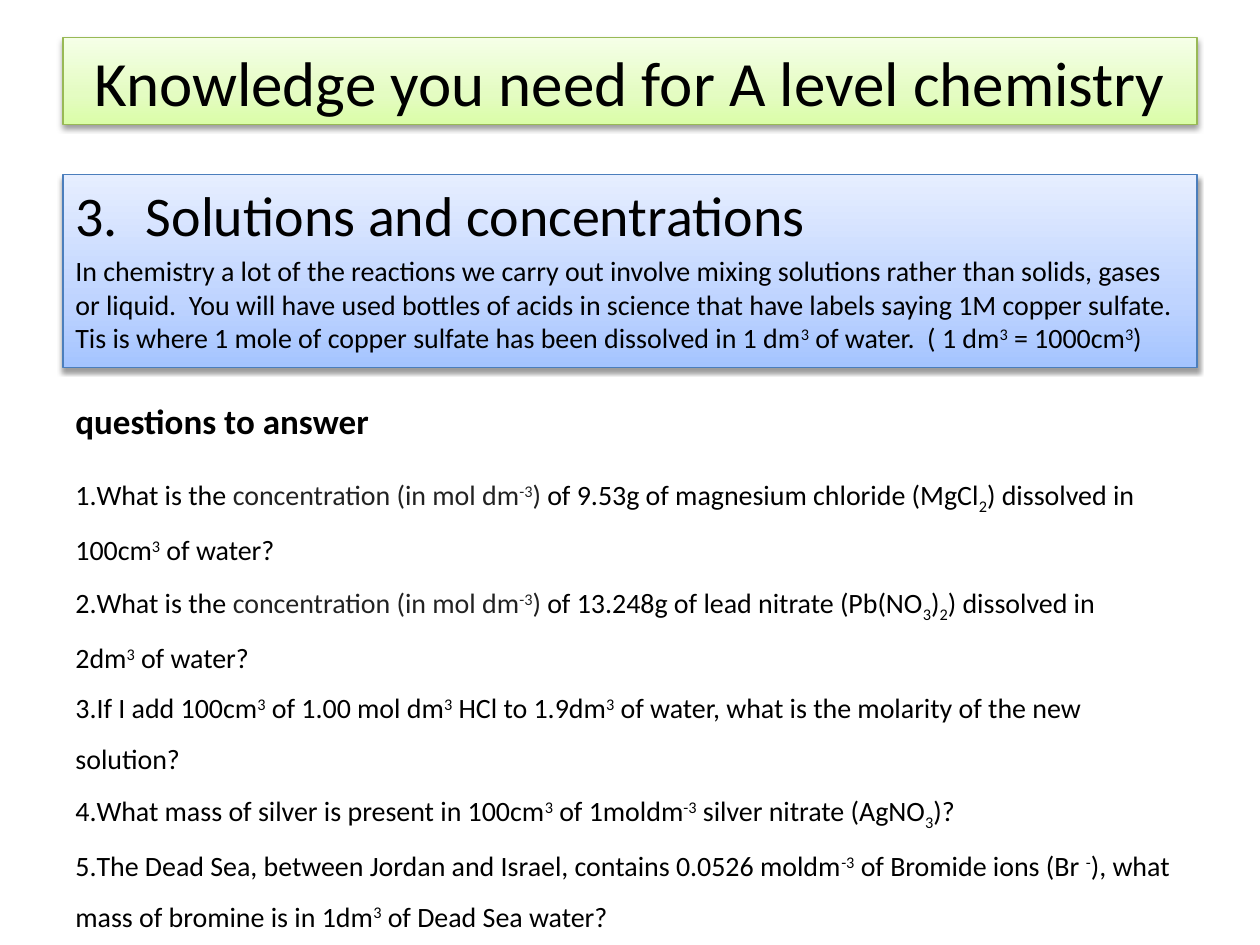
import pptx
import pptx.util
import pptx.dml.color
import pptx.enum.shapes
import pptx.enum.text
import pptx.oxml
import pptx.oxml.ns

Pt = pptx.util.Pt
COLOURS = {"text": "000000", "grey": "222222", "shadow": "000000",
           "green_line": "98B955", "blue_line": "4B7EBC"}
GREEN = [(0, "DAFDA7"), (35, "E4FCC2"), (100, "F5FFE7")]
BLUE = [(0, "A4C4FF"), (35, "BFD4FF"), (100, "E6EEFF")]
NAMESPACE = pptx.oxml.ns.nsdecls("a")

deck = pptx.Presentation()
deck.slide_width = pptx.util.Inches(10)
deck.slide_height = pptx.util.Inches(7.5)
slide = deck.slides.add_slide(deck.slide_layouts[6])
W, H = deck.slide_width, deck.slide_height
MARGIN = int(W * 0.05)


def write(paragraph, marked, size, bold=False):
    """Split marked text at "|": ^ raises, _ lowers, * greys a run; ~ is a no-break space."""
    paragraph.font.name = "Calibri"
    paragraph.font.size = Pt(size)
    paragraph.font.bold = bold
    for part in marked.split("|"):
        words = part.lstrip("*^_")
        marks = part[:len(part) - len(words)]
        run = paragraph.add_run()
        run.text = words.replace("~", chr(160))
        colour = COLOURS["grey" if "*" in marks else "text"]
        run.font.color.rgb = pptx.dml.color.RGBColor.from_string(colour)
        if "^" in marks:
            run.font._element.set("baseline", "30000")
        elif "_" in marks:
            run.font._element.set("baseline", "-25000")


def number(paragraph, start, indent=0):
    """Give the paragraph an automatic number with a hanging indent."""
    properties = paragraph._p.get_or_add_pPr()
    properties.set("marL", str(indent))
    properties.set("indent", str(-indent))
    bullet = pptx.oxml.parse_xml(
        f'<a:buAutoNum {NAMESPACE} type="arabicPeriod" startAt="{start}"/>')
    properties.find(pptx.oxml.ns.qn("a:defRPr")).addprevious(bullet)


# Title and topic panels
panels = []
for top, height, stops, line in [(0.04, 0.092, GREEN, "green_line"),
                                 (0.185, 0.204, BLUE, "blue_line")]:
    panel = slide.shapes.add_shape(pptx.enum.shapes.MSO_SHAPE.RECTANGLE,
                                   MARGIN, int(H * top), W - 2 * MARGIN, int(H * height))
    panel.fill.gradient()
    panel.fill.gradient_angle = 90
    stop_list = panel._element.spPr.find(".//" + pptx.oxml.ns.qn("a:gsLst"))
    stop_list.clear()
    for position, colour in stops:
        stop_list.append(pptx.oxml.parse_xml(
            f'<a:gs {NAMESPACE} pos="{position * 1000}"><a:srgbClr val="{colour}"/></a:gs>'))
    panel.line.color.rgb = pptx.dml.color.RGBColor.from_string(COLOURS[line])
    panel.line.width = Pt(0.75)
    panel.shadow.inherit = False
    panel._element.spPr.find(pptx.oxml.ns.qn("a:effectLst")).append(pptx.oxml.parse_xml(
        f'<a:outerShdw {NAMESPACE} blurRad="40000" dist="20000" dir="5400000" rotWithShape="0">'
        f'<a:srgbClr val="{COLOURS["shadow"]}"><a:alpha val="38000"/></a:srgbClr></a:outerShdw>'))
    panel.text_frame.word_wrap = True
    panels.append(panel.text_frame)

title, topic = panels
title.vertical_anchor = pptx.enum.text.MSO_ANCHOR.MIDDLE
title.paragraphs[0].alignment = pptx.enum.text.PP_ALIGN.CENTER
write(title.paragraphs[0], "Knowledge you need for A level chemistry", 36)

topic.vertical_anchor = pptx.enum.text.MSO_ANCHOR.TOP
heading, explanation = topic.paragraphs[0], topic.add_paragraph()
write(heading, "Solutions and concentrations", 32)
number(heading, 3, pptx.util.Inches(0.56))
write(explanation,
      "In chemistry a lot of the reactions we carry out involve mixing solutions rather than "
      "solids, gases or liquid.  You will have used bottles of acids in science that have labels "
      "saying 1M copper sulfate.  Tis is where 1 mole of copper sulfate has been dissolved in "
      "1 dm|^3| of water.  ( 1 dm|^3| = 1000cm|^3|)", 16)
for paragraph, space in [(heading, 6.4), (explanation, 3.2)]:
    paragraph.alignment = pptx.enum.text.PP_ALIGN.LEFT
    paragraph.space_before = Pt(space)

# Questions
CONCENTRATION = "What is the~|*concentration (in mol dm|*^-3|*)~|of "
QUESTIONS = [
    CONCENTRATION + "9.53g of magnesium chloride (MgCl|_2|) dissolved in 100cm|^3|~of water?~",
    CONCENTRATION + "13.248g of lead nitrate (Pb(NO|_3|)|_2|) dissolved in 2dm|^3|~of water?~",
    "If I add 100cm|^3|~of 1.00 mol~dm|^3|~HCl to 1.9dm|^3|~of water, "
    "what is the molarity of the new solution?~",
    "What mass of silver is present in 100cm|^3|~of 1moldm|^-3|~silver nitrate (AgNO|_3|)?~",
    "The Dead Sea, between Jordan and Israel, contains 0.0526 moldm|^-3|~of Bromide ions "
    "(Br~|^-|), what mass of bromine is in 1dm|^3|~of Dead Sea water?~",
]
questions = slide.shapes.add_textbox(MARGIN, int(H * 0.479), int(W * 0.891),
                                     int(H * 0.492)).text_frame
questions.word_wrap = True
for start, question in enumerate(QUESTIONS, 1):
    paragraph = questions.paragraphs[0] if start == 1 else questions.add_paragraph()
    paragraph.line_spacing = 1.5
    write(paragraph, question, 16)
    number(paragraph, start)

label = slide.shapes.add_textbox(MARGIN, int(H * 0.416), int(W * 0.255), int(H * 0.058))
label.text_frame.word_wrap = False
write(label.text_frame.paragraphs[0], "questions to answer", 20, bold=True)

deck.save("out.pptx")
